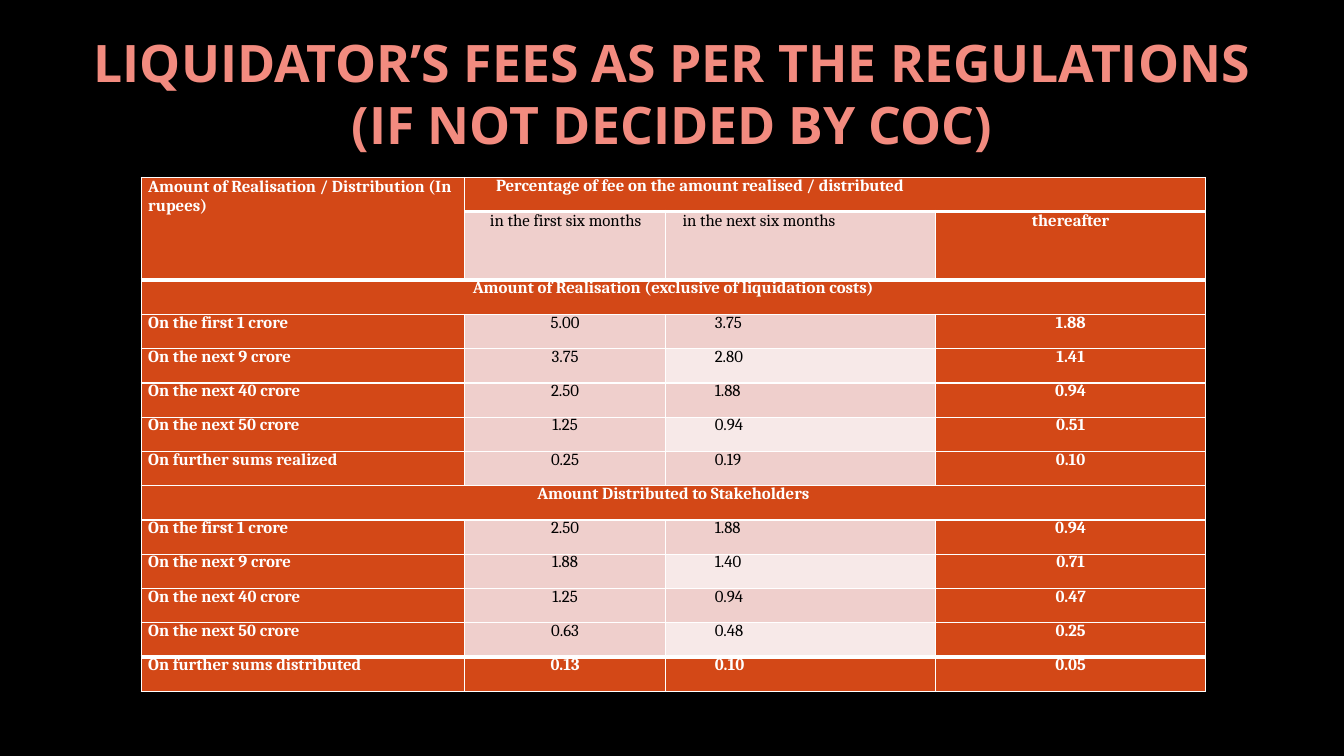
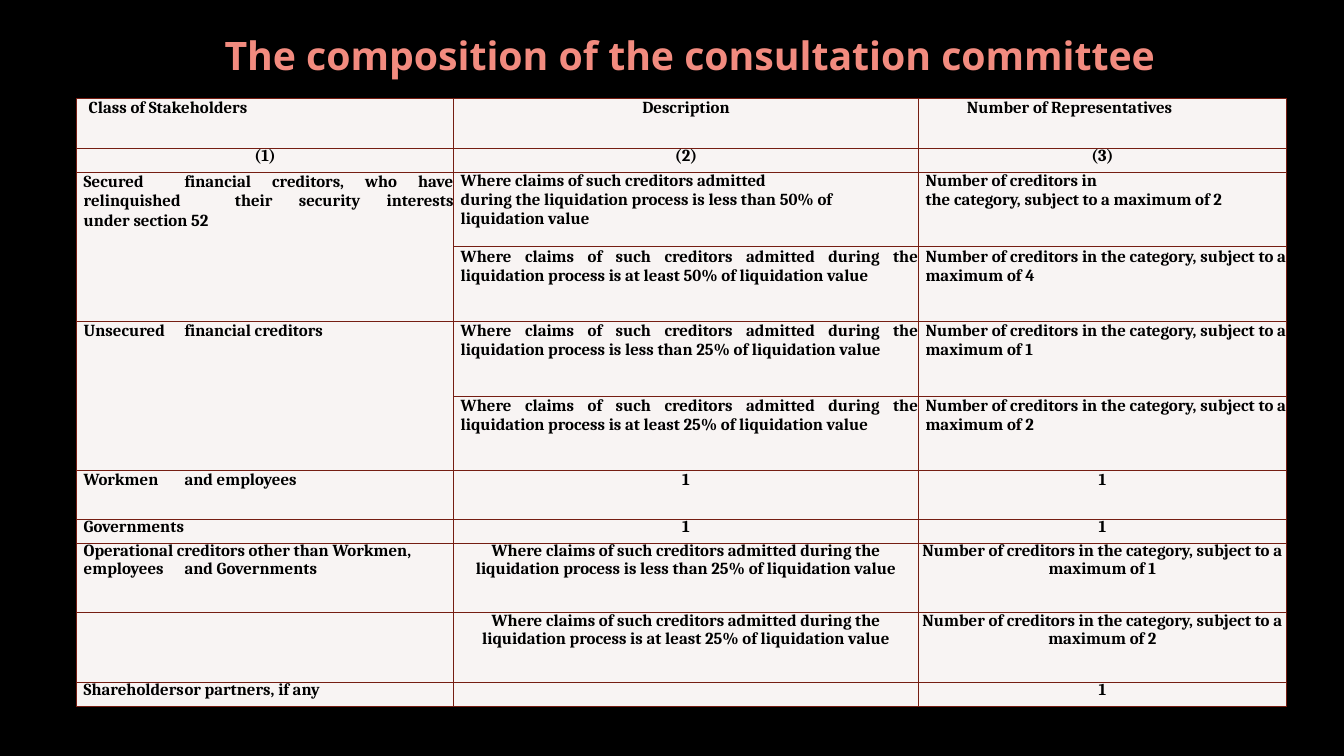
from lxml import etree
from pptx import Presentation
from pptx.dml.color import RGBColor
from pptx.enum.text import MSO_ANCHOR, MSO_AUTO_SIZE, PP_ALIGN
from pptx.oxml import parse_xml
from pptx.oxml.ns import nsdecls, qn
from pptx.util import Inches, Pt

LEFT, MID, FULL = PP_ALIGN.LEFT, PP_ALIGN.CENTER, PP_ALIGN.JUSTIFY
CENTRE, FIXED = MSO_ANCHOR.MIDDLE, MSO_AUTO_SIZE.NONE
BLACK, WHITE, CORAL = "000000", "FFFFFF", "F28B7F"
RUST, ROSE, BLUSH = "D34817", "EFCFCC", "F7E9E8"
CREAM, MAROON = "F8F4F3", "751D12"
tone = RGBColor.from_string


def write(frame, text, size=12, face="Cambria", color=BLACK, bold=True,
          align=LEFT, indent=0, lead=None, tabs=()):
    for i, line in enumerate(text.split("\n")):
        para = frame.paragraphs[0] if i == 0 else frame.add_paragraph()
        para.alignment = align
        if lead:
            para.line_spacing = Pt(lead)
        props = para._p.get_or_add_pPr()
        props.set("marL", str(Inches(indent)))
        props.set("indent", "0")
        if tabs:
            stops = etree.SubElement(props, qn("a:tabLst"))
            for stop in tabs:
                etree.SubElement(stops, qn("a:tab"), pos=str(Inches(stop)), algn="l")
        if not line:
            para._p.get_or_add_endParaRPr().set("sz", str(size * 100))
            continue
        run = para.add_run()
        run.text = line
        font = run.font
        font.size, font.name, font.bold = Pt(size), face, bold
        font.color.rgb = tone(color)


def paint(cell, fill, edge, width, top=None, base=None):
    cell.margin_left = cell.margin_right = cell.margin_top = cell.margin_bottom = 0
    cell.fill.solid()
    cell.fill.fore_color.rgb = tone(fill)
    sides = {"lnL": width, "lnR": width, "lnT": top or width, "lnB": base or width}
    for i, (side, wide) in enumerate(sides.items()):
        cell._tc.get_or_add_tcPr().insert(i, parse_xml(
            f'<a:{side} {nsdecls("a")} w="{Pt(wide)}"><a:solidFill>'
            f'<a:srgbClr val="{edge}"/></a:solidFill></a:{side}>'))


fees = [
    ["Amount of Realisation / Distribution (In rupees)",
     "Percentage of fee on the amount realised / distributed", "", ""],
    ["", "in the first six months", "in the next six months", "thereafter"],
    ["Amount of Realisation (exclusive of liquidation costs)", "", "", ""],
    ["On the first 1 crore", "5.00", "3.75", "1.88"],
    ["On the next 9 crore", "3.75", "2.80", "1.41"],
    ["On the next 40 crore", "2.50", "1.88", "0.94"],
    ["On the next 50 crore", "1.25", "0.94", "0.51"],
    ["On further sums realized", "0.25", "0.19", "0.10"],
    ["Amount Distributed to Stakeholders", "", "", ""],
    ["On the first 1 crore", "2.50", "1.88", "0.94"],
    ["On the next 9 crore", "1.88", "1.40", "0.71"],
    ["On the next 40 crore", "1.25", "0.94", "0.47"],
    ["On the next 50 crore", "0.63", "0.48", "0.25"],
    ["On further sums distributed", "0.13", "0.10", "0.05"],
]
claim = "Where claims of such creditors admitted during the liquidation process is {} of liquidation value"
quota = "Number of creditors in the category, subject to a maximum of {}"
seats = [
    ["Class of Stakeholders", "Description", "Number of Representatives"],
    ["(1)", "(2)", "(3)"],
    ["Secured\tfinancial creditors, who have relinquished\t\ttheir security interests under section 52",
     "Where claims of such creditors admitted\n"
     "during the liquidation process is less than 50% of liquidation value",
     "Number of creditors in\nthe category, subject to a maximum of 2"],
    ["", claim.format("at least 50%"), quota.format(4)],
    ["Unsecured\tfinancial creditors", claim.format("less than 25%"), quota.format(1)],
    ["", claim.format("at least 25%"), quota.format(2)],
    ["Workmen\tand employees", "1", "1"],
    ["Governments", "1", "1"],
    ["Operational creditors other than Workmen, employees\tand Governments",
     claim.format("less than 25%"), quota.format(1)],
    ["", claim.format("at least 25%"), quota.format(2)],
    ["Shareholders\tor partners, if any", "", "1"],
]
pages = [
    ("LIQUIDATOR’S FEES AS PER THE REGULATIONS (IF NOT DECIDED BY COC)", 36.9,
     (0.67, 0.3, 12, 1.25), (1.4, 1.76, 10.55, 5.06), [3.21, 1.99, 2.68, 2.68],
     [0.34, 0.68] + [0.34] * 12,
     [(0, 0, 1, 0), (0, 1, 0, 3), (2, 0, 2, 3), (8, 0, 8, 3)]),
    ("The composition of the consultation committee", 28,
     (1.23, 0.01, 11.22, 1.06), (0.76, 0.98, 12, 6.04), [3.74, 4.61, 3.65],
     [0.49, 0.24] + [0.74] * 4 + [0.48, 0.24, 0.69, 0.69, 0.24],
     [(2, 0, 3, 0), (4, 0, 5, 0)]),
]

deck = Presentation()
deck.slide_width, deck.slide_height = Inches(13.33), Inches(7.5)
back = deck.slide_master.background.fill
back.solid()
back.fore_color.rgb = tone(BLACK)

grids = []
for name, size, place, area, cols, rows, spans in pages:
    slide = deck.slides.add_slide(deck.slide_layouts[5])
    title = slide.shapes.title
    title.left, title.top, title.width, title.height = map(Inches, place)
    frame = title.text_frame
    frame.auto_size, frame.word_wrap, frame.vertical_anchor = FIXED, True, CENTRE
    write(frame, name, size=size, face="Open Sans", color=CORAL, align=MID)
    grid = slide.shapes.add_table(len(rows), len(cols), *map(Inches, area)).table
    grid.first_row = grid.horz_banding = False
    for col, wide in zip(grid.columns, cols):
        col.width = Inches(wide)
    for row, tall in zip(grid.rows, rows):
        row.height = Inches(tall)
    for r, c, down, right in spans:
        grid.cell(r, c).merge(grid.cell(down, right))
    grids.append(grid)

rates, panel = grids
last = len(fees) - 1
heavy = (0, 1, last - 1)
shift = {(0, 1): 0.31, (1, 1): 0.25, (1, 2): 0.17}
for r, row in enumerate(fees):
    for c, text in enumerate(row):
        cell = rates.cell(r, c)
        light = c in (1, 2) and r not in (0, 2, 8, last)
        fill = RUST if not light else BLUSH if c == 2 and r % 2 == 0 else ROSE
        paint(cell, fill, WHITE, 1, top=3 if r - 1 in heavy else 1,
              base=3 if r in heavy else 1)
        if cell.is_spanned:
            continue
        mid = r in (2, 8) or c == 3 or c == 1 and r > 2
        indent = 0 if mid else shift.get((r, c), 0.49 if c == 2 else 0.07)
        lead = None if r == c == 0 else 13.8 if r == 1 else 12.8
        write(cell.text_frame, text, color=BLACK if light else WHITE, bold=not light,
              align=MID if mid else LEFT, indent=indent, lead=lead)

leads = [13.8, 12.7, 13.5, 13.8, 13.8, 13.8, 13.7] + [12.7] * 4
stops = {2: (1.11, 1.39), 4: (1.11,), 6: (1.46,)}
for r, row in enumerate(seats):
    for c, text in enumerate(row):
        cell = panel.cell(r, c)
        paint(cell, CREAM, MAROON, 0.75)
        if cell.is_spanned:
            continue
        if r == 1 or c and r > 5 or r == 0 and c == 1:
            align, indent = MID, 0
        elif r == 0:
            align, indent = LEFT, 0.48 if c else 0.12
        else:
            align, indent = FULL if c and r > 2 or r == 2 and c == 0 else LEFT, 0.07
        write(cell.text_frame, text, align=align, indent=indent,
              lead=None if c == 0 and r in (2, 4) else leads[r],
              tabs=stops.get(r, ()) if c == 0 else ())

deck.save("out.pptx")
